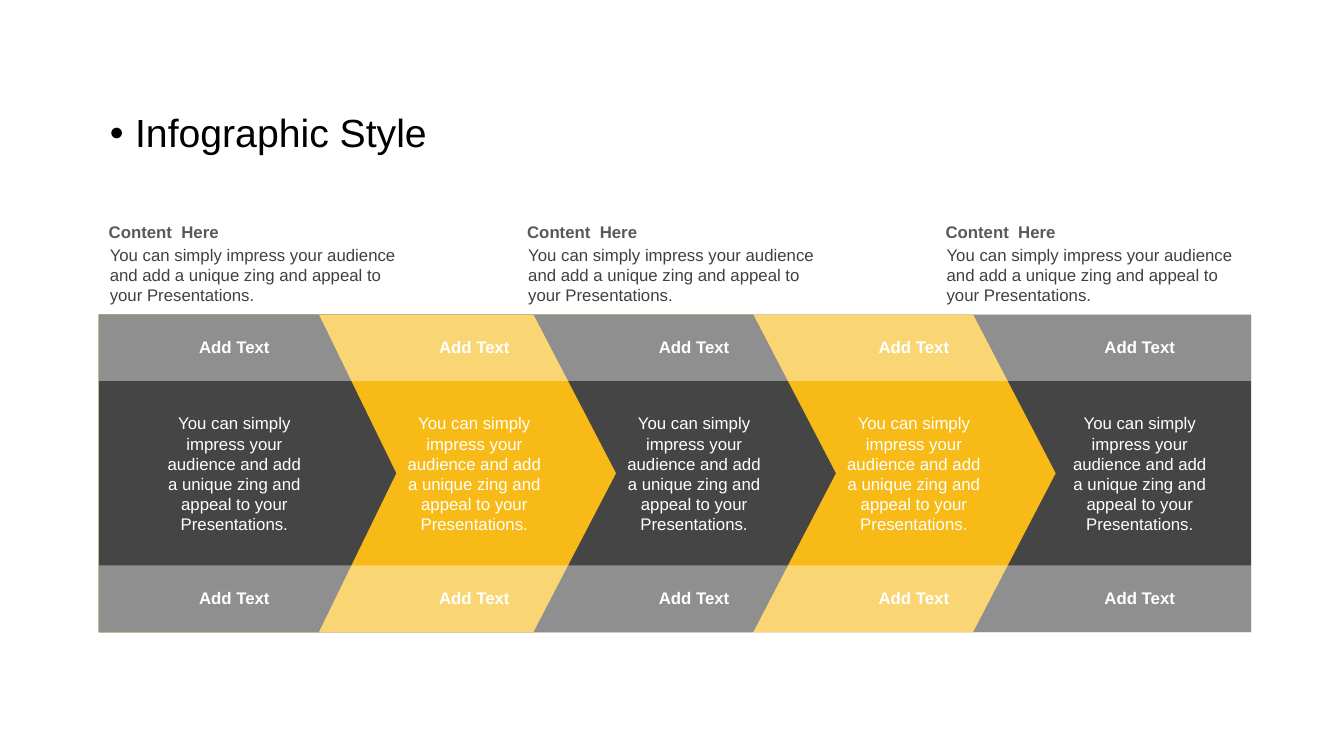
from dataclasses import dataclass

from pptx import Presentation
from pptx import util as u
from pptx.dml.color import RGBColor
from pptx.enum import shapes, text
from pptx.oxml import ns
from lxml import etree

PX = 9144  # EMU in one px, 100 px to the inch


@dataclass(frozen=True)
class Theme:
    font: str = "Arial"
    head: int = 28
    body: int = 12
    black: str = "000000"
    white: str = "FFFFFF"
    dark: str = "454545"
    gold: str = "F8BA16"
    label: str = "595959"
    copy: str = "404040"


THEME = Theme()
BLURB = ("You can simply impress your audience and add a unique zing "
         "and appeal to your Presentations.")
LEFT, TOP, HIGH = 98, 312, 315      # arrow band
FIRST, STEP, COUNT = 295, 218, 5    # arrow widths
WIDE = 1143
COLS = (154, 392, 610, 828, 1052)   # text columns on the arrows
NOTES = (98, 513, 928)              # notes above the arrows


def px(*vals):
    return [u.Emu(val * PX) for val in vals]


def style(frame, size, color, bold=False):
    for para in frame.paragraphs:
        for run in para.runs:
            font = run.font
            font.name, font.size, font.bold = THEME.font, u.Pt(size), bold
            font.color.rgb = RGBColor.from_string(color)


def add_head(slide, words):
    slide.shapes.title.element.getparent().remove(slide.shapes.title.element)
    body = slide.placeholders[1]
    body.left, body.top, body.width, body.height = px(99, 108, 1266, 79)
    frame = body.text_frame
    frame.text = words
    frame.auto_size = text.MSO_AUTO_SIZE.NONE
    para = frame.paragraphs[0]
    para.line_spacing, para.space_before = 0.9, u.Pt(10)
    # Hanging bullet
    props = para._p.get_or_add_pPr()
    props.set("marL", str(25 * PX))
    props.set("indent", str(-25 * PX))
    etree.SubElement(props, ns.qn("a:buChar")).set("char", "•")
    style(frame, THEME.head, THEME.black)


def add_block(slide, kind, box, color, alpha=None):
    block = slide.shapes.add_shape(kind, *px(*box))
    block.shadow.inherit = False
    block.fill.solid()
    block.fill.fore_color.rgb = RGBColor.from_string(color)
    block.line.fill.background()
    if alpha is not None:
        tint = block.element.spPr.find(".//" + ns.qn("a:srgbClr"))
        etree.SubElement(tint, ns.qn("a:alpha")).set("val", str(alpha * 1000))
    return block


def add_text(slide, box, words, color, bold=False, center=False, middle=False):
    frame = slide.shapes.add_textbox(*px(*box)).text_frame
    frame.word_wrap = True
    frame.auto_size = text.MSO_AUTO_SIZE.SHAPE_TO_FIT_TEXT
    frame.text = words
    if center:
        frame.paragraphs[0].alignment = text.PP_ALIGN.CENTER
    if middle:
        frame.vertical_anchor = text.MSO_ANCHOR.MIDDLE
    style(frame, THEME.body, color, bold)


def add_arrows(slide):
    # Widest first, so each shorter arrow lies on top
    for i in reversed(range(COUNT)):
        last = i == COUNT - 1
        wide = WIDE if last else FIRST + i * STEP
        arrow = add_block(slide, shapes.MSO_SHAPE.PENTAGON,
                          (LEFT, TOP, wide, HIGH),
                          THEME.gold if i % 2 else THEME.dark)
        arrow.adjustments[0] = 0 if last else 0.26


def add_note(slide, left):
    add_text(slide, (left, 215, 312, 30), "Content  Here", THEME.label,
             bold=True, middle=True)
    add_text(slide, (left + 1, 238, 311, 71), BLURB, THEME.copy)


def main():
    deck = Presentation()
    deck.slide_width, deck.slide_height = px(1333, 750)
    slide = deck.slides.add_slide(deck.slide_layouts[1])

    add_head(slide, "Infographic Style")
    add_arrows(slide)

    # Pale strips along the top and bottom of the arrows
    for top in (TOP, 561):
        add_block(slide, shapes.MSO_SHAPE.RECTANGLE,
                  (LEFT, top, WIDE, 66), THEME.white, alpha=40)

    # Text on the arrows
    for left in COLS:
        for top in (329, 578):
            add_text(slide, (left, top, 157, 30), "Add Text", THEME.white,
                     bold=True, center=True)
        add_text(slide, (left, 405, 157, 131), BLURB, THEME.white, center=True)

    # Notes above the arrows
    for left in NOTES:
        add_note(slide, left)

    deck.save("out.pptx")


if __name__ == "__main__":
    main()
